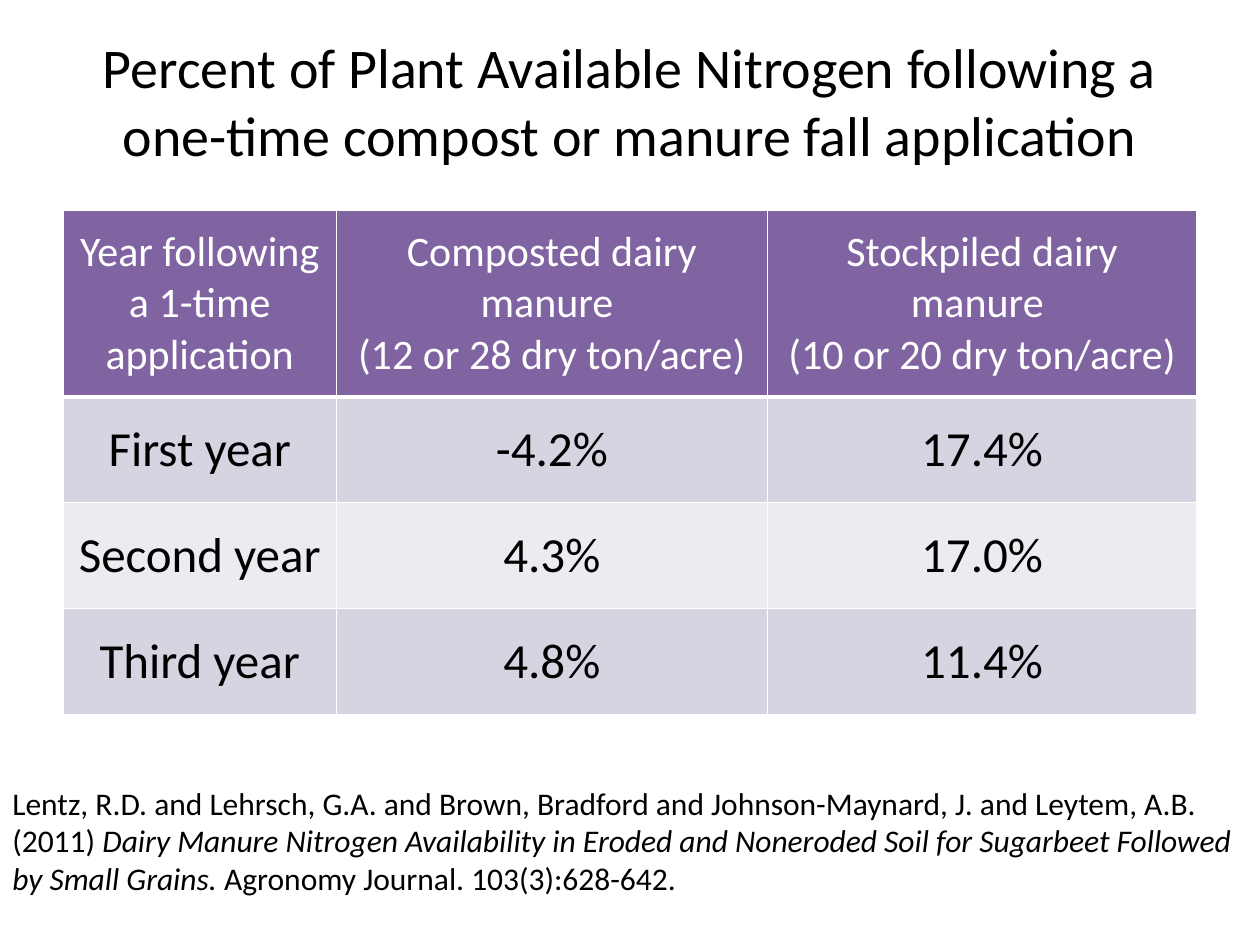
from lxml import etree
from pptx import Presentation
from pptx import util as u
from pptx.dml.color import RGBColor
from pptx.enum import text as t
from pptx.oxml import ns

WHITE, BLACK, PURPLE = "FFFFFF", "000000", "8064A2"
BANDS = ("D8D3E0", "EDEAF0")

TITLE = ("Percent of Plant Available Nitrogen following a "
         "one-time compost or manure fall application")
HEADINGS = [
    "Year following a 1-time application",
    "Composted dairy manure \n(12 or 28 dry ton/acre)",
    "Stockpiled dairy manure \n(10 or 20 dry ton/acre)",
]
AVAILABILITY = [
    ("First year", "-4.2%", "17.4%"),
    ("Second year", "4.3%", "17.0%"),
    ("Third year", "4.8%", "11.4%"),
]
AUTHORS = ("Lentz, R.D. and Lehrsch, G.A. and Brown, Bradford and "
           "Johnson-Maynard, J. and Leytem, A.B. (2011) ")
ARTICLE = ("Dairy Manure Nitrogen Availability in Eroded and Noneroded Soil "
           "for Sugarbeet Followed by Small Grains.")
JOURNAL = " Agronomy Journal. 103(3):628-642."


def color(hex_string):
    return RGBColor.from_string(hex_string)


def add_run(paragraph, words, size=18, ink=BLACK, italic=False, font="Calibri"):
    run = paragraph.add_run()
    run.text = words
    run.font.name = font
    run.font.size = u.Pt(size)
    run.font.italic = italic
    run.font.color.rgb = color(ink)


def write(frame, words, align=t.PP_ALIGN.CENTER, **style):
    """Put each line of words in its own paragraph."""
    for i, line in enumerate(words.split("\n")):
        paragraph = frame.add_paragraph() if i else frame.paragraphs[0]
        paragraph.alignment = align
        add_run(paragraph, line, **style)


def set_borders(cell, ink=WHITE, bottom=1):
    """Draw all four cell edges; widths are in points."""
    properties = cell._tc.get_or_add_tcPr()
    for i, (side, width) in enumerate(zip("LRTB", (1, 1, 1, bottom))):
        edge = etree.Element(ns.qn(f"a:ln{side}"), w=str(u.Pt(width)))
        fill = etree.SubElement(edge, ns.qn("a:solidFill"))
        etree.SubElement(fill, ns.qn("a:srgbClr"), val=ink)
        properties.insert(i, edge)


class SlideBuilder:
    """Holds the deck and the slide being filled."""

    def __init__(self, width, height):
        self.deck = Presentation()
        self.deck.slide_width = u.Inches(width)
        self.deck.slide_height = u.Inches(height)
        self.slide = self.deck.slides.add_slide(self.deck.slide_layouts[6])

    def text_box(self, *place, anchor=t.MSO_ANCHOR.TOP):
        box = self.slide.shapes.add_textbox(*map(u.Inches, place))
        box.text_frame.word_wrap = True
        box.text_frame.vertical_anchor = anchor
        return box.text_frame

    def table(self, left, top, widths, heights, rows):
        grid = self.slide.shapes.add_table(
            len(heights), len(widths), u.Inches(left), u.Inches(top),
            u.Inches(sum(widths)), u.Inches(sum(heights))).table
        for column, width in zip(grid.columns, widths):
            column.width = u.Inches(width)
        for r, (row, height) in enumerate(zip(rows, heights)):
            grid.rows[r].height = u.Inches(height)
            for c, words in enumerate(row):
                self.table_cell(grid.cell(r, c), words, r)

    def table_cell(self, cell, words, row):
        header = row == 0
        cell.vertical_anchor = t.MSO_ANCHOR.MIDDLE
        cell.fill.solid()
        cell.fill.fore_color.rgb = color(PURPLE if header else BANDS[(row - 1) % 2])
        set_borders(cell, bottom=3 if header else 1)
        write(cell.text_frame, words, size=24 if header else 28,
              ink=WHITE if header else BLACK)


def main():
    builder = SlideBuilder(10, 7.5)
    title = builder.text_box(0.5, 0.17, 9, 1.25, anchor=t.MSO_ANCHOR.MIDDLE)
    write(title, TITLE, size=32)

    builder.table(0.5, 1.67, widths=[2.17, 3.42, 3.41],
                  heights=[1.48] + [0.84] * len(AVAILABILITY),
                  rows=[HEADINGS, *AVAILABILITY])

    citation = builder.text_box(0, 6.17, 10, 1.01).paragraphs[0]
    add_run(citation, AUTHORS)
    add_run(citation, ARTICLE, italic=True)
    add_run(citation, JOURNAL)
    builder.deck.save("out.pptx")


if __name__ == "__main__":
    main()
